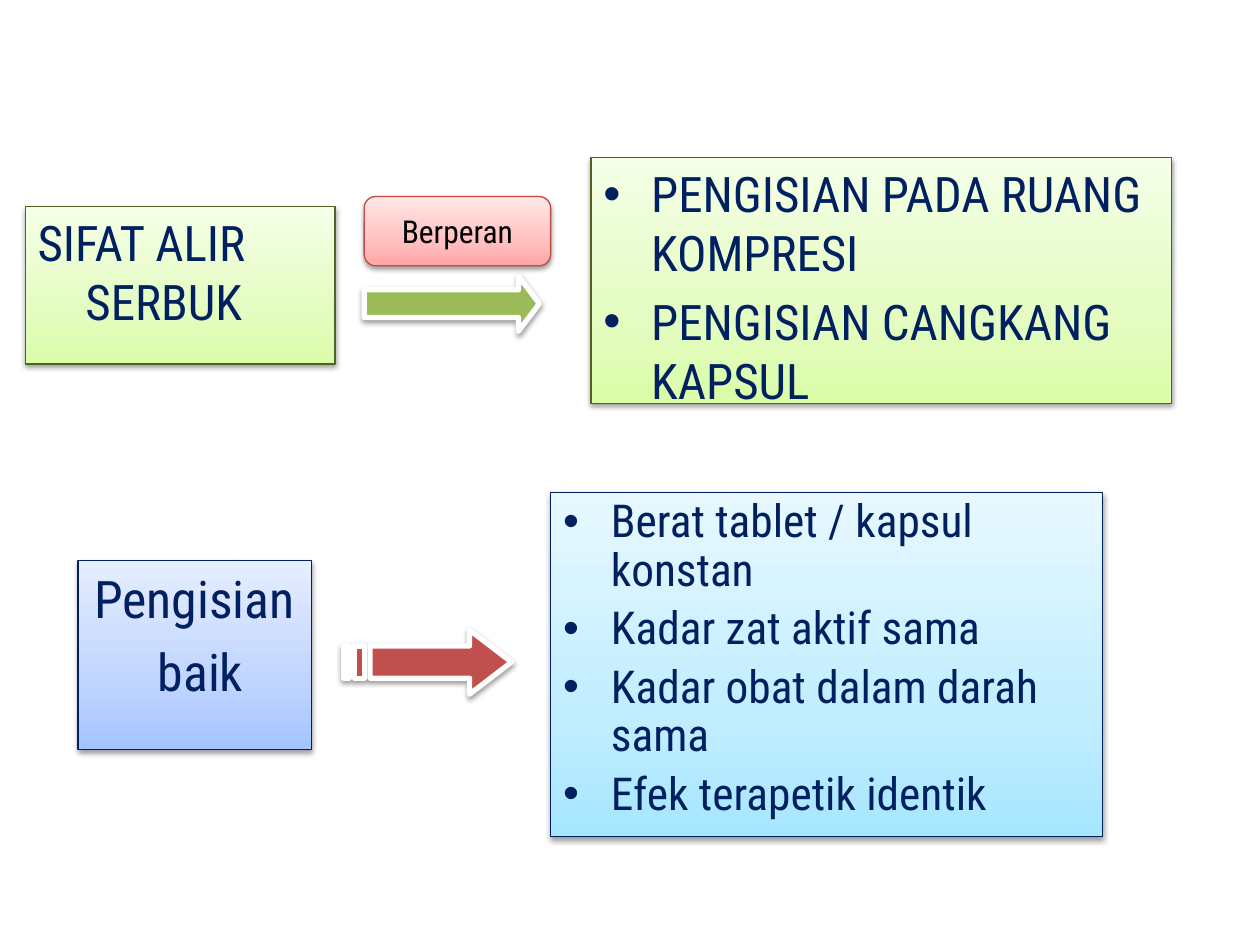
from copy import deepcopy

from pptx import Presentation
from pptx.dml.color import RGBColor
from pptx.enum.shapes import MSO_SHAPE as Shape
from pptx.enum.text import MSO_ANCHOR as Anchor, PP_ALIGN as Align
from pptx.oxml import parse_xml
from pptx.oxml.ns import nsdecls, qn
from pptx.util import Inches, Pt

NAVY = RGBColor(0x00, 0x20, 0x60)
BLACK = RGBColor(0x00, 0x00, 0x00)
WHITE = RGBColor(0xFF, 0xFF, 0xFF)
OLIVE = RGBColor(0x4F, 0x62, 0x28)
GREEN = RGBColor(0x9B, 0xBB, 0x59)
RED = RGBColor(0xC0, 0x50, 0x4D)
ROSE = RGBColor(0xBF, 0x4C, 0x48)
LIME_FADE = (RGBColor(0xDA, 0xFD, 0xA7), RGBColor(0xE4, 0xFC, 0xC2), RGBColor(0xF5, 0xFF, 0xE7))
PINK_FADE = (RGBColor(0xFF, 0xA6, 0xA5), RGBColor(0xFF, 0xC0, 0xBF), RGBColor(0xFF, 0xE7, 0xE7))
BLUE_FADE = (RGBColor(0xA4, 0xC4, 0xFF), RGBColor(0xBF, 0xD4, 0xFF), RGBColor(0xE6, 0xEE, 0xFF))
AQUA_FADE = (RGBColor(0xA7, 0xE6, 0xFF), RGBColor(0xC1, 0xED, 0xFF), RGBColor(0xE7, 0xF8, 0xFF))
FADE_STOPS = (0, 0.35, 1)
COLUMNS, ROWS = 100, 75


def write_text(frame, lines, size=28, color=NAVY, font="Roboto Condensed", align=Align.LEFT,
               anchor=Anchor.TOP, hanging=True, bullet=None, spacing=None):
    frame.word_wrap = True
    frame.vertical_anchor = anchor
    for index, line in enumerate(lines):
        para = frame.add_paragraph() if index else frame.paragraphs[0]
        para.alignment = align
        para.line_spacing = spacing
        if index:
            para.space_before = Pt(round(size * 0.2, 1))
        props = para._p.get_or_add_pPr()
        if hanging:
            props.set("marL", str(Inches(0.38)))
            props.set("indent", str(-Inches(0.38)))
        if bullet:
            props.append(parse_xml(f'<a:buFont {nsdecls("a")} typeface="Arial"/>'))
            props.append(parse_xml(f'<a:buChar {nsdecls("a")} char="{bullet}"/>'))
        span = para.add_run()
        span.text = line
        span.font.name = font
        span.font.size = Pt(size)
        span.font.color.rgb = color


class FlowPage:
    def __init__(self, deck):
        self.page = deck.slides.add_slide(deck.slide_layouts[6])
        self.column = deck.slide_width / COLUMNS
        self.row = deck.slide_height / ROWS

    def place(self, left, top, width, height):
        return [round(value) for value in (left * self.column, top * self.row,
                                           width * self.column, height * self.row)]

    def outline(self, shape, color, weight):
        shape.line.color.rgb = color
        shape.line.width = Pt(weight)
        shape.shadow.inherit = False
        effects = shape._element.spPr.find(qn("a:effectLst"))
        effects.append(parse_xml(
            f'<a:outerShdw {nsdecls("a")} blurRad="{Pt(3.1)}" dist="{Pt(1.6)}" dir="5400000" '
            'rotWithShape="0"><a:srgbClr val="000000"><a:alpha val="38000"/></a:srgbClr></a:outerShdw>'))

    def fade(self, shape, colors):
        shape.fill.gradient()
        shape.fill.gradient_angle = 90
        first = shape._element.spPr.find(".//" + qn("a:gs"))
        first.addnext(deepcopy(first))
        for stop, position, color in zip(shape.fill.gradient_stops, FADE_STOPS, colors):
            stop.position = position
            stop.color.rgb = color

    def text_box(self, area, lines, colors, edge, kind=Shape.RECTANGLE, **style):
        box = self.page.shapes.add_shape(kind, *self.place(*area))
        self.fade(box, colors)
        self.outline(box, edge, 0.75)
        write_text(box.text_frame, lines, **style)

    def arrow(self, area, color, head):
        arrow = self.page.shapes.add_shape(Shape.RIGHT_ARROW, *self.place(*area))
        arrow.adjustments[1] = head
        arrow.fill.solid()
        arrow.fill.fore_color.rgb = color
        self.outline(arrow, WHITE, 3)

    def striped_arrow(self, area, color):
        left, top, width, height = self.place(*area)

        def points(*shares):
            return [(round(left + x * width), round(top + y * height)) for x, y in shares]

        def stripe(start, end):
            return points((start, 0.25), (start, 0.75), (end, 0.75), (end, 0.25))

        head, body = 0.75, 5 / 32
        contours = (
            points((head, 0), (head, 0.25), (body, 0.25), (body, 0.75),
                   (head, 0.75), (head, 1), (1, 0.5)),
            stripe(1 / 16, 1 / 8),
            stripe(0, 1 / 32),
        )
        builder = self.page.shapes.build_freeform(*contours[0][0])
        for index, contour in enumerate(contours):
            if index:
                builder.move_to(*contour[0])
            builder.add_line_segments(contour[1:], close=True)
        arrow = builder.convert_to_shape()
        arrow.fill.solid()
        arrow.fill.fore_color.rgb = color
        self.outline(arrow, WHITE, 3)


def main():
    deck = Presentation()
    deck.slide_width, deck.slide_height = Inches(10), Inches(7.5)
    flow = FlowPage(deck)
    flow.text_box((2, 16.4, 24.6, 12.5), ["SIFAT ALIR SERBUK"], LIME_FADE, OLIVE)
    flow.text_box((46.9, 12.5, 46.1, 19.5),
                  ["PENGISIAN PADA RUANG KOMPRESI", "PENGISIAN CANGKANG KAPSUL"],
                  LIME_FADE, OLIVE, bullet="•")
    flow.arrow((28.9, 21.9, 13.9, 4.4), GREEN, head=0.375)
    flow.text_box((28.9, 15.6, 14.8, 5.5), ["Berperan"], PINK_FADE, ROSE,
                  kind=Shape.ROUNDED_RECTANGLE, size=18, color=BLACK, align=Align.CENTER,
                  anchor=Anchor.MIDDLE, hanging=False)
    flow.text_box((6.2, 44.5, 18.5, 15), ["Pengisian", " baik"], BLUE_FADE, NAVY,
                  size=29.6, align=Align.CENTER)
    flow.text_box((43.7, 39.1, 43.8, 27.3),
                  ["Berat tablet / kapsul konstan", "Kadar zat aktif sama",
                   "Kadar obat dalam darah sama", "Efek terapetik identik"],
                  AQUA_FADE, NAVY, size=25.9, bullet="•", spacing=0.9)
    flow.striped_arrow((27.3, 50, 13.3, 5.1), RED)
    deck.save("out.pptx")


if __name__ == "__main__":
    main()
